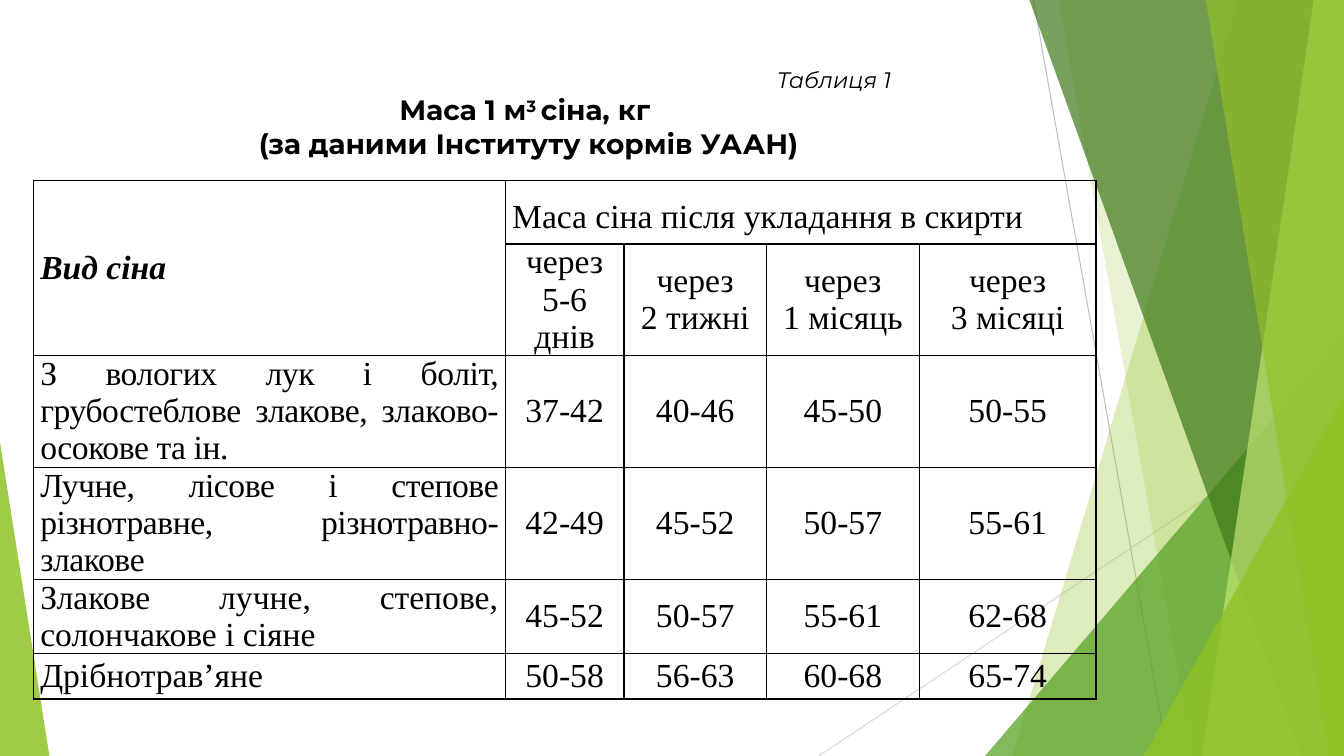
from pptx import Presentation
from pptx import util as u
from pptx.dml.color import RGBColor
from pptx.enum import shapes, text
from pptx.oxml import parse_xml
from pptx.oxml.ns import nsdecls, qn


class Theme:
    ink = "000000"
    lime = "90C226"
    green = "54A021"
    forest = "3F7819"
    pale = "C0E474"
    rays = ("BFBFBF", "D9D9D9")
    heading_font = "Montserrat"
    table_font = "Times New Roman"
    label_size = u.Pt(16)
    heading_size = u.Pt(20)
    table_size = u.Pt(24)


def style(paragraph, font_name, size, align, bold=False, italic=False):
    paragraph.alignment = align
    font = paragraph.font
    font.name, font.size, font.bold, font.italic = font_name, size, bold, italic
    font.color.rgb = RGBColor.from_string(Theme.ink)


def paint(facet, colour, opacity):
    facet.shadow.inherit = False
    facet.line.fill.background()
    facet.fill.solid()
    facet.fill.fore_color.rgb = RGBColor.from_string(colour)
    tint = facet.fill._xPr.find(".//" + qn("a:srgbClr"))
    tint.append(parse_xml(f'<a:alpha {nsdecls("a")} val="{opacity * 1000}"/>'))


ALIGN = text.PP_ALIGN
MIDDLE = text.MSO_ANCHOR.MIDDLE
WIDTH, HEIGHT = 13.33, 7.5

deck = Presentation()
deck.slide_width, deck.slide_height = u.Inches(WIDTH), u.Inches(HEIGHT)
slide = deck.slides.add_slide(deck.slide_layouts[5])
heading = slide.shapes.title

rays = [(10.25, 0, 11.58, HEIGHT), (WIDTH, 4.03, 8.12, HEIGHT)]
for ends, colour in zip(rays, Theme.rays):
    ray = slide.shapes.add_connector(shapes.MSO_CONNECTOR.STRAIGHT, *map(u.Inches, ends))
    ray.line.color.rgb = RGBColor.from_string(colour)
    ray.line.width = u.Pt(0.75)
    ray._element.spPr.append(parse_xml(f'<a:effectLst {nsdecls("a")}/>'))

facets = [
    ("pane", (12.28, 10.04), Theme.lime, 30),
    ("pane", (10.5, 11.83), Theme.lime, 20),
    ("corner", (9.77, 3.33, 3.56, 1), Theme.green, 72),
    ("pane", (10.21, 12.91), Theme.forest, 70),
    ("pane", (13.03, 11.92), Theme.pale, 70),
    ("pane", (11.96, 13.18), Theme.lime, 65),
    ("corner", (11.34, 3.93, 1.99, 1), Theme.lime, 80),
    ("corner", (0, 4.39, 0.49, 0), Theme.lime, 85),
]
for kind, geometry, colour, opacity in facets:
    if kind == "pane":
        top_x, bottom_x = geometry
        corners = [(WIDTH, 0), (WIDTH, HEIGHT), (bottom_x, HEIGHT)]
        outline = slide.shapes.build_freeform(u.Inches(top_x), 0)
        outline.add_line_segments([(u.Inches(x), u.Inches(y)) for x, y in corners])
        facet = outline.convert_to_shape()
    else:
        left, top, width, apex = geometry
        facet = slide.shapes.add_shape(
            shapes.MSO_SHAPE.ISOSCELES_TRIANGLE,
            *map(u.Inches, (left, top, width, HEIGHT - top)))
        facet.adjustments[0] = apex
    paint(facet, colour, opacity)

columns = [4.68, 1.18, 1.41, 1.52, 1.75]
row_heights = [0.63, 1.1, 1.11, 1.11, 0.74, 0.45]
hay_rows = [
    ["Вид сіна", "Маса сіна після укладання в скирти", "", "", ""],
    ["", "через\n5-6 днів", "через\n2 тижні", "через\n1 місяць", "через\n3 місяці"],
    ["З вологих лук і боліт, грубостеблове злакове, злаково-осокове та ін.",
     "37-42", "40-46", "45-50", "50-55"],
    ["Лучне, лісове і степове різнотравне, різнотравно-злакове",
     "42-49", "45-52", "50-57", "55-61"],
    ["Злакове лучне, степове, солончакове і сіяне",
     "45-52", "50-57", "55-61", "62-68"],
    ["Дрібнотрав’яне", "50-58", "56-63", "60-68", "65-74"],
]
hay_table = slide.shapes.add_table(
    len(hay_rows), len(columns), u.Inches(0.33), u.Inches(1.79),
    u.Inches(sum(columns)), u.Inches(sum(row_heights))).table
hay_table.first_row = hay_table.horz_banding = False
for column, width in zip(hay_table.columns, columns):
    column.width = u.Inches(width)
for row, height in zip(hay_table.rows, row_heights):
    row.height = u.Inches(height)

for r, hay_row in enumerate(hay_rows):
    for c, content in enumerate(hay_row):
        cell = hay_table.cell(r, c)
        cell.text = content
        cell.margin_left = cell.margin_right = u.Inches(0.07)
        cell.margin_top = cell.margin_bottom = 0
        cell.vertical_anchor = MIDDLE
        for edge in ("lnL", "lnR", "lnT", "lnB"):
            cell._tc.get_or_add_tcPr().append(parse_xml(
                f'<a:{edge} {nsdecls("a")} w="12700"><a:solidFill>'
                f'<a:srgbClr val="{Theme.ink}"/></a:solidFill></a:{edge}>'))
        cell.fill.background()
        corner = r == c == 0
        align = ALIGN.JUSTIFY if r == 0 or c == 0 else ALIGN.CENTER
        for paragraph in cell.text_frame.paragraphs:
            style(paragraph, Theme.table_font, Theme.table_size, align, corner, corner)

for r in (2, 3):
    hay_kind = hay_table.cell(r, 0).text_frame.paragraphs[0].runs[0]
    hay_kind._r.get_or_add_rPr().set("spc", "-30")

mass_header = hay_table.cell(0, 1)
mass_header.vertical_anchor = text.MSO_ANCHOR.TOP
mass_header.text_frame.paragraphs[0].line_spacing = 1.5
mass_header.text_frame.paragraphs[0].space_after = u.Pt(10)
mass_header.merge(hay_table.cell(0, 4))
hay_table.cell(0, 0).merge(hay_table.cell(1, 0))

heading.left, heading.top = u.Inches(1.55), u.Inches(0.6)
heading.width, heading.height = u.Inches(7.39), u.Inches(1.04)
frame = heading.text_frame
frame.word_wrap = True
frame.auto_size = text.MSO_AUTO_SIZE.NONE
frame.vertical_anchor = MIDDLE
frame.text = "Таблиця 1\nМаса 1 м\n(за даними Інституту кормів УААН)"
label, mass_title, credit = frame.paragraphs
style(label, Theme.heading_font, Theme.label_size, ALIGN.RIGHT, italic=True)
for paragraph in (mass_title, credit):
    style(paragraph, Theme.heading_font, Theme.heading_size, ALIGN.CENTER, bold=True)
cube = mass_title.add_run()
cube.text = "3 "
cube._r.get_or_add_rPr().set("baseline", "30000")
mass_title.add_run().text = "сіна, кг "
slide.shapes._spTree.append(heading._element)

deck.save("out.pptx")
